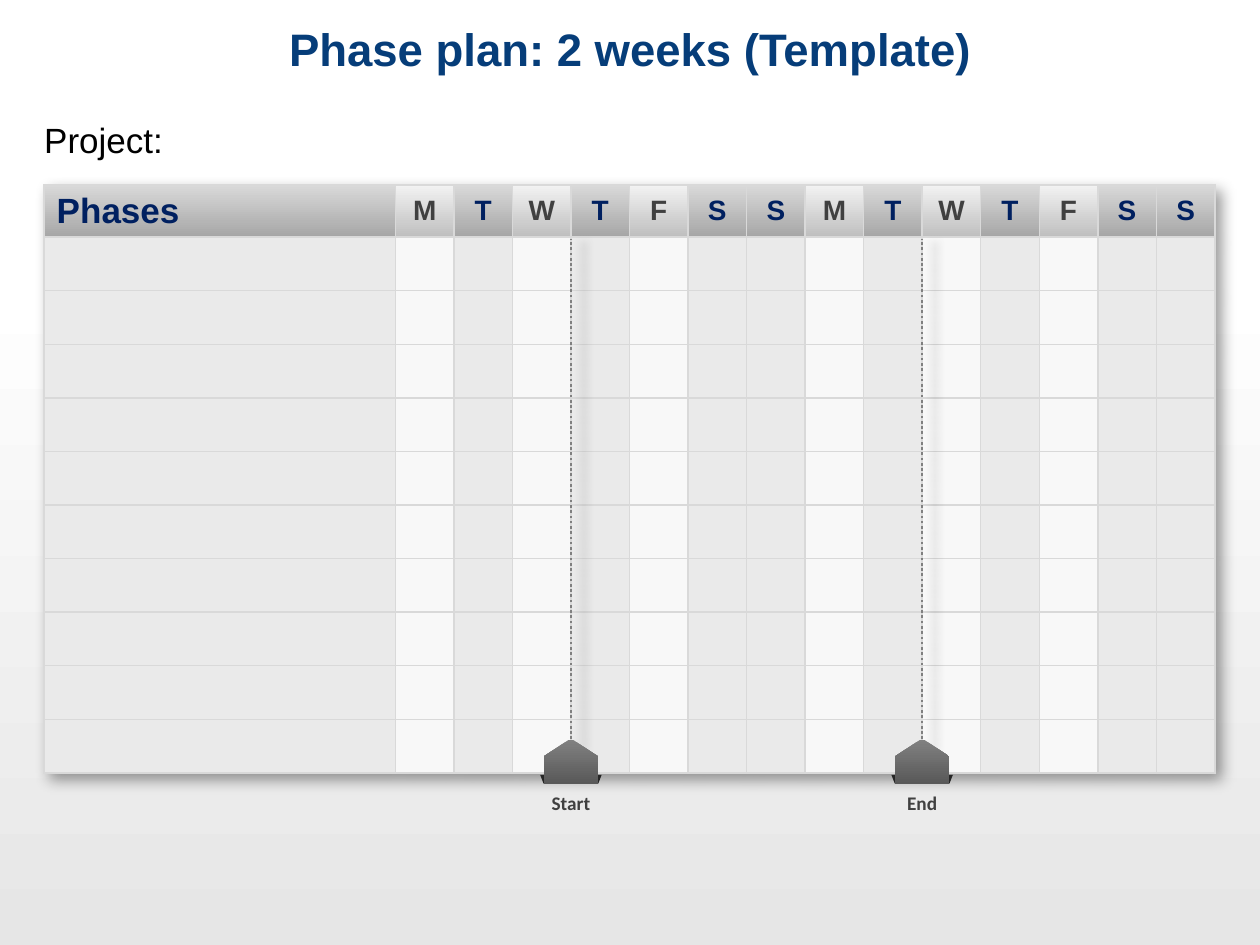
import dataclasses

import pptx
import pptx.dml.color
import pptx.enum.dml
import pptx.enum.shapes
import pptx.enum.text
import pptx.oxml
import pptx.oxml.ns
import pptx.util

Cm = pptx.util.Cm
Pt = pptx.util.Pt
ALIGN = pptx.enum.text.PP_ALIGN
MIDDLE = pptx.enum.text.MSO_ANCHOR.MIDDLE

DAYS = "MTWTFSS" * 2
PHASE_ROWS = 10
LEFT, TOP, WIDTH = 0.89, 3.73, 23.6
PHASE_W, DAY_W = 7.08, 1.18
HEAD_H, ROW_H = 1.05, 1.08
MILESTONES = {"Start": 3, "End": 9}


@dataclasses.dataclass
class Theme:
    """Fonts, colours and type sizes of the plan."""
    font: str = "Arial"
    label_font: str = "Calibri"
    title: str = "063D79"
    text: str = "000000"
    navy: str = "002060"
    grey: str = "404040"
    border: str = "D9D9D9"
    light: str = "F8F8F8"
    dark: str = "EAEAEA"
    light_head: tuple = ("F2F2F2", "BFBFBF")
    dark_head: tuple = ("D9D9D9", "A6A6A6")
    backdrop: tuple = ("FFFFFF", "E6E6E6")
    marker: tuple = ("808080", "595959")
    ear: str = "262626"
    line: str = "808080"
    title_size: int = 26
    head_size: int = 20
    day_size: int = 16
    label_size: int = 11


class PlanSlide:
    """Draws the elements of a phase plan on one slide."""

    def __init__(self, prs, theme):
        self.theme = theme
        self.s = prs.slides.add_slide(prs.slide_layouts[1])

    def paint(self, fill, colour):
        """Fill with one colour, or with a pair running from top to bottom."""
        if isinstance(colour, str):
            fill.solid()
            fill.fore_color.rgb = pptx.dml.color.RGBColor.from_string(colour)
            return
        fill.gradient()
        fill.gradient_angle = 270
        for stop, shade in zip(fill.gradient_stops, colour):
            stop.color.rgb = pptx.dml.color.RGBColor.from_string(shade)

    def set_text(self, tf, text, size, colour, bold=True, align=ALIGN.LEFT, font=None):
        """Set the text of a frame and format its run."""
        tf.text = text
        p = tf.paragraphs[0]
        p.alignment = align
        p.space_before = Pt(0)
        r = p.runs[0]
        r.font.name = font or self.theme.font
        r.font.size = Pt(size)
        r.font.bold = bold
        r.font.color.rgb = pptx.dml.color.RGBColor.from_string(colour)

    def shadow(self, blur, dist, angle):
        """Return an effect list with one outer shadow."""
        return pptx.oxml.parse_xml(
            f'<a:effectLst {pptx.oxml.ns.nsdecls("a")}>'
            f'<a:outerShdw blurRad="{Pt(blur)}" dist="{Pt(dist)}" dir="{angle * 60000}" '
            'algn="tl" rotWithShape="0"><a:srgbClr val="000000"><a:alpha val="40000"/>'
            '</a:srgbClr></a:outerShdw></a:effectLst>')

    def place(self, sp, left, top, width, height):
        """Move and size a placeholder and return its text frame."""
        sp.left, sp.top, sp.width, sp.height = map(Cm, (left, top, width, height))
        tf = sp.text_frame
        tf.word_wrap = True
        tf.auto_size = pptx.enum.text.MSO_AUTO_SIZE.NONE
        return tf

    def backdrop(self):
        """Shade the lower part of the slide."""
        sp = self.s.shapes.add_shape(pptx.enum.shapes.MSO_SHAPE.RECTANGLE,
                                     0, Cm(5.61), Cm(25.4), Cm(13.44))
        sp.shadow.inherit = False
        sp.line.fill.background()
        self.paint(sp.fill, self.theme.backdrop)

    def title(self, text):
        """Fill the title placeholder."""
        tf = self.place(self.s.shapes.title, 0.41, 0.08, 24.6, 1.8)
        tf.vertical_anchor = MIDDLE
        self.set_text(tf, text, self.theme.title_size, self.theme.title, align=ALIGN.CENTER)

    def body(self, text):
        """Fill the body placeholder with one unbulleted line."""
        tf = self.place(self.s.placeholders[1], LEFT, 2.39, WIDTH, 0.94)
        tf.margin_left = tf.margin_right = tf.margin_top = tf.margin_bottom = 0
        self.set_text(tf, text, self.theme.head_size, self.theme.text, bold=False)
        pPr = tf.paragraphs[0]._p.get_or_add_pPr()
        pPr.set("marL", "0")
        pPr.set("indent", "0")
        pPr.append(pptx.oxml.parse_xml(f'<a:buNone {pptx.oxml.ns.nsdecls("a")}/>'))

    def cell(self, cell, colour):
        """Fill and outline a table cell."""
        self.paint(cell.fill, colour)
        tcPr = cell._tc.get_or_add_tcPr()
        for i, side in enumerate("LRTB"):
            tcPr.insert(i, pptx.oxml.parse_xml(
                f'<a:ln{side} {pptx.oxml.ns.nsdecls("a")} w="{Pt(1)}"><a:solidFill>'
                f'<a:srgbClr val="{self.theme.border}"/></a:solidFill></a:ln{side}>'))

    def table(self, heads):
        """Add the calendar grid under its header row."""
        t = self.theme
        table = self.s.shapes.add_table(
            PHASE_ROWS + 1, len(heads), Cm(LEFT), Cm(TOP), Cm(WIDTH),
            Cm(HEAD_H + PHASE_ROWS * ROW_H)).table
        table.horz_banding = False
        table._tbl.tblPr.insert(0, self.shadow(8, 5, 45))
        for i, row in enumerate(table.rows):
            row.height = Cm(ROW_H if i else HEAD_H)
        for j, head in enumerate(heads):
            table.columns[j].width = Cm(DAY_W if j else PHASE_W)
            light = head in "MWF"
            top = table.cell(0, j)
            top.vertical_anchor = MIDDLE
            self.cell(top, t.light_head if light else t.dark_head)
            if j:
                top.margin_left = top.margin_right = 0
            self.set_text(top.text_frame, head, t.day_size if j else t.head_size,
                          t.grey if light else t.navy,
                          align=ALIGN.CENTER if j else ALIGN.LEFT)
            for i in range(1, PHASE_ROWS + 1):
                self.cell(table.cell(i, j), t.light if light else t.dark)

    def outline(self, shapes, points, colour):
        """Add a filled polygon."""
        first, *rest = [(Cm(x), Cm(y)) for x, y in points]
        builder = shapes.build_freeform(*first)
        builder.add_line_segments(rest, close=True)
        sp = builder.convert_to_shape()
        sp.shadow.inherit = False
        sp.line.fill.background()
        self.paint(sp.fill, colour)

    def milestone(self, label, day):
        """Mark the end of a day with a dotted line, a pointer and a label."""
        t = self.theme
        x = LEFT + PHASE_W + day * DAY_W
        shapes = self.s.shapes.add_group_shape().shapes
        line = shapes.add_connector(pptx.enum.shapes.MSO_CONNECTOR.STRAIGHT,
                                    Cm(x), Cm(15.11), Cm(x), Cm(4.82))
        line.line.color.rgb = pptx.dml.color.RGBColor.from_string(t.line)
        line.line.width = Pt(1.5)
        line.line.dash_style = pptx.enum.dml.MSO_LINE.ROUND_DOT
        line._element.spPr.append(self.shadow(5, 7, 0))
        for side in (-1, 1):
            self.outline(shapes, [(x + side * 0.47, 15.62), (x + side * 0.55, 15.8),
                                  (x + side * 0.62, 15.62)], t.ear)
        self.outline(shapes, [(x - 0.55, 15.8), (x + 0.55, 15.8), (x + 0.55, 15.25),
                              (x + 0.05, 14.92), (x - 0.05, 14.92), (x - 0.55, 15.25)],
                     t.marker)
        sp = shapes.add_textbox(Cm(x - 2.31), Cm(15.8), Cm(4.62), Cm(0.76))
        tf = sp.text_frame
        tf.word_wrap = False
        tf.vertical_anchor = MIDDLE
        self.set_text(tf, label, t.label_size, t.grey, align=ALIGN.CENTER, font=t.label_font)


def main():
    """Build the two-week phase plan."""
    prs = pptx.Presentation()
    prs.slide_width, prs.slide_height = Cm(25.4), Cm(19.05)
    plan = PlanSlide(prs, Theme())
    plan.backdrop()
    plan.title("Phase plan: 2 weeks (Template)")
    plan.body("Project:")
    plan.table(["Phases", *DAYS])
    for label, day in MILESTONES.items():
        plan.milestone(label, day)
    prs.save("out.pptx")


if __name__ == "__main__":
    main()
